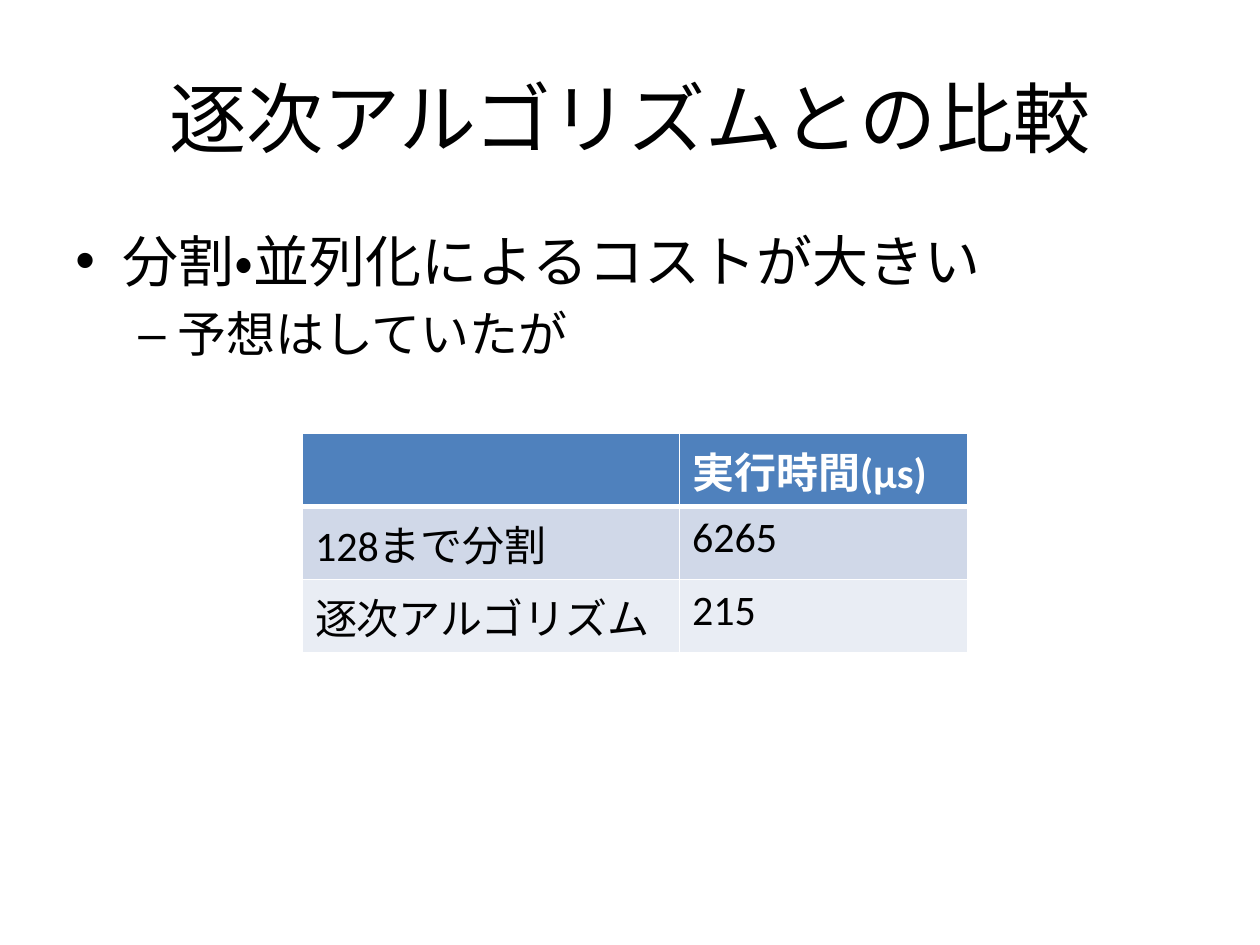
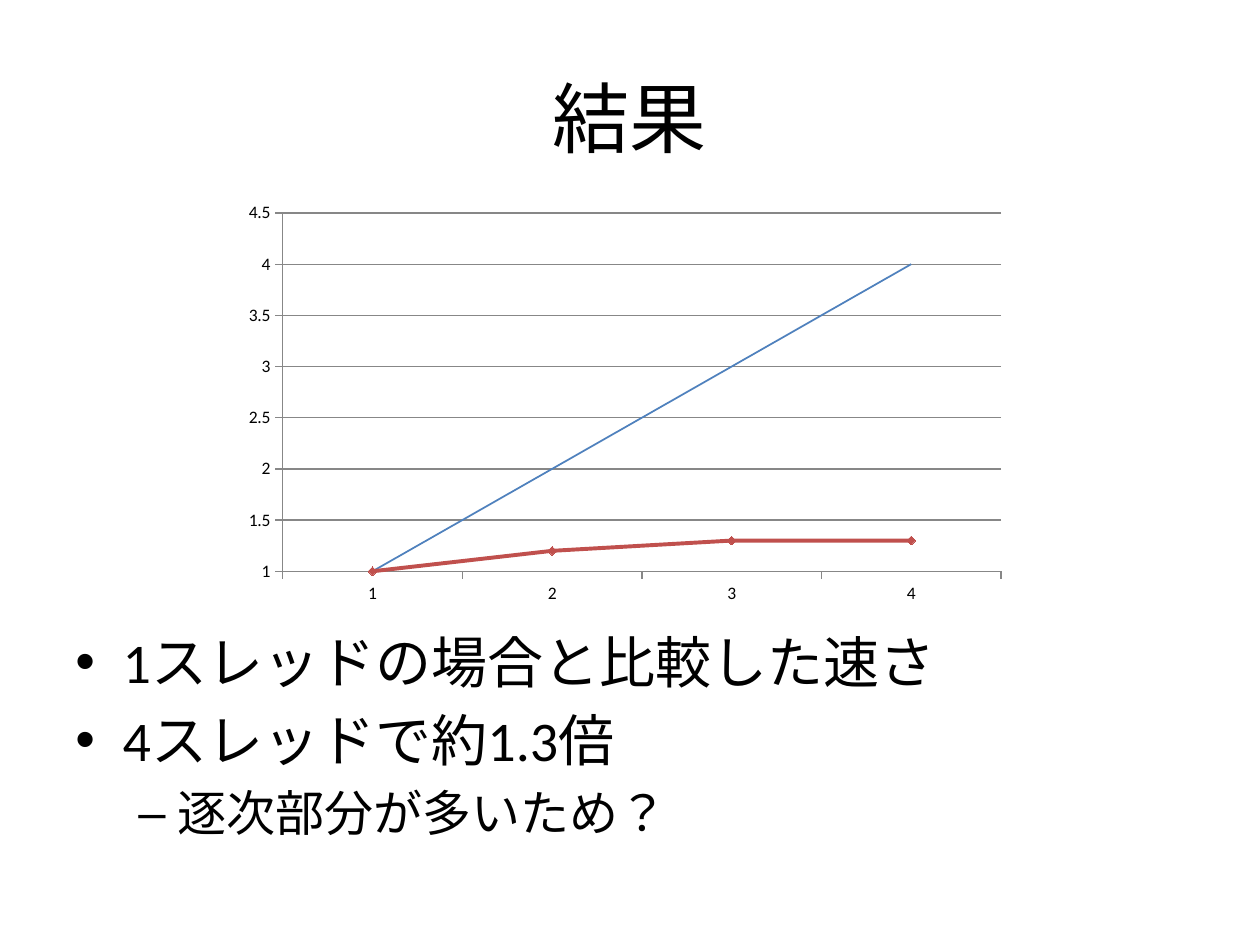
from lxml.etree import SubElement
from pptx import Presentation
from pptx.chart.data import CategoryChartData
from pptx.dml.color import RGBColor
from pptx.enum.chart import XL_CHART_TYPE, XL_MARKER_STYLE, XL_TICK_MARK
from pptx.enum.lang import MSO_LANGUAGE_ID
from pptx.enum.text import MSO_ANCHOR, PP_ALIGN
from pptx.oxml import parse_xml
from pptx.oxml.ns import nsdecls, qn
from pptx.util import Pt

FONT = "Calibri"
COLORS = {
    "text": "000000",
    "white": "FFFFFF",
    "blue": "4F81BD",
    "red": "C0504D",
    "band_dark": "D0D8E8",
    "band_light": "E9EDF4",
    "grid": "878787",
}
TITLE_BOX = (36, 21.6, 648, 90)
LEVELS = [
    {"bullet": "•", "size": 32, "margin": 27, "hanging": 27},
    {"bullet": "–", "size": 28, "margin": 58.5, "hanging": 22.5},
]


def color(name):
    return RGBColor.from_string(COLORS[name])


def points(box):
    return [Pt(length) for length in box]


def style_font(font, size, name="text", bold=False):
    font.name = FONT
    font.size = Pt(size)
    font.bold = bold
    font.color.rgb = color(name)


def style_runs(paragraph, size, name="text", bold=False):
    for run in paragraph.runs:
        style_font(run.font, size, name, bold)
        run.font.language_id = MSO_LANGUAGE_ID.JAPANESE


def add_text_frame(slide, box):
    text_frame = slide.shapes.add_textbox(*points(box)).text_frame
    text_frame.word_wrap = True
    return text_frame


def add_title(slide, title):
    text_frame = add_text_frame(slide, TITLE_BOX)
    text_frame.vertical_anchor = MSO_ANCHOR.MIDDLE
    text_frame.text = title
    paragraph = text_frame.paragraphs[0]
    paragraph.alignment = PP_ALIGN.CENTER
    style_runs(paragraph, 44)


def add_bullets(slide, box, items):
    text_frame = add_text_frame(slide, box)
    text_frame.text = "\n".join(text for text, _ in items)
    for paragraph, (_, level) in zip(text_frame.paragraphs, items):
        style = LEVELS[level]
        paragraph.level = level
        paragraph.space_before = Pt(style["size"] * 0.2)
        style_runs(paragraph, style["size"])
        properties = paragraph._p.get_or_add_pPr()
        properties.set("marL", str(Pt(style["margin"])))
        properties.set("indent", str(-Pt(style["hanging"])))
        SubElement(properties, qn("a:buFont")).set("typeface", "Arial")
        SubElement(properties, qn("a:buChar")).set("char", style["bullet"])


def set_borders(cell, widths):
    properties = cell._tc.get_or_add_tcPr()
    for index, (side, width) in enumerate(widths.items()):
        line = parse_xml(
            f'<a:ln{side} {nsdecls("a")} w="{Pt(width)}"><a:solidFill>'
            f'<a:srgbClr val="{COLORS["white"]}"/></a:solidFill></a:ln{side}>'
        )
        properties.insert(index, line)


def add_time_table(slide, box, rows, column_widths):
    shape = slide.shapes.add_table(len(rows), len(column_widths), *points(box))
    table = shape.table
    for column, width in zip(table.columns, column_widths):
        column.width = Pt(width)
    fills = ["blue", "band_dark", "band_light"]
    for row_index, texts in enumerate(rows):
        header = row_index == 0
        for column_index, text in enumerate(texts):
            cell = table.cell(row_index, column_index)
            cell.fill.solid()
            cell.fill.fore_color.rgb = color(fills[row_index])
            top = 3 if row_index == 1 else 1
            set_borders(cell, {"L": 1, "R": 1, "T": top, "B": 3 if header else 1})
            if text:
                cell.text_frame.text = text
                style_runs(cell.text_frame.paragraphs[0], 24,
                           "white" if header else "text", header)


def style_line(line, name, width):
    line.color.rgb = color(name)
    line.width = Pt(width)


def add_speed_chart(slide, box):
    data = CategoryChartData()
    data.categories = ["1", "2", "3", "4"]
    data.add_series("Series 1", [1, 2, 3, 4])
    data.add_series("Series 2", [1, 1.2, 1.3, 1.3])
    chart = slide.shapes.add_chart(
        XL_CHART_TYPE.LINE_MARKERS, *points(box), data).chart
    chart.has_legend = False
    chart.has_title = False
    style_font(chart.font, 10)

    for axis in (chart.category_axis, chart.value_axis):
        axis.major_tick_mark = XL_TICK_MARK.OUTSIDE
        axis.minor_tick_mark = XL_TICK_MARK.NONE
        style_line(axis.format.line, "grid", 0.75)
    value_axis = chart.value_axis
    value_axis.minimum_scale = 1
    value_axis.maximum_scale = 4.5
    value_axis.major_unit = 0.5
    value_axis.has_major_gridlines = True
    style_line(value_axis.major_gridlines.format.line, "grid", 0.75)

    plot = chart.plots[0]
    plot.vary_by_categories = False
    ideal, measured = plot.series
    for series, name, width in ((ideal, "blue", 1), (measured, "red", 2.25)):
        series.smooth = False
        style_line(series.format.line, name, width)
    ideal.marker.style = XL_MARKER_STYLE.NONE
    marker = measured.marker
    marker.style = XL_MARKER_STYLE.DIAMOND
    marker.size = 5
    marker.format.fill.solid()
    marker.format.fill.fore_color.rgb = color("red")
    style_line(marker.format.line, "red", 0.75)


def build_comparison(slide):
    add_title(slide, "逐次アルゴリズムとの比較")
    add_bullets(slide, (36, 126, 648, 229), [
        ("分割・並列化によるコストが大きい", 0),
        ("予想はしていたが", 1),
    ])
    rows = [
        ("", "実行時間(μs)"),
        ("128まで分割", "6265"),
        ("逐次アルゴリズム", "215"),
    ]
    add_time_table(slide, (172.8, 247.7, 380, 125.4), rows, (215.5, 164.5))


def build_results(slide):
    add_title(slide, "結果")
    add_bullets(slide, (36, 355, 648, 164), [
        ("1スレッドの場合と比較した速さ", 0),
        ("4スレッドで約1.3倍", 0),
        ("逐次部分が多いため？", 1),
    ])
    add_speed_chart(slide, (133.2, 111.3, 447.8, 238.3))


def main():
    presentation = Presentation()
    presentation.slide_width = Pt(720)
    presentation.slide_height = Pt(540)
    for build in (build_comparison, build_results):
        build(presentation.slides.add_slide(presentation.slide_layouts[6]))
    presentation.save("out.pptx")


if __name__ == "__main__":
    main()
